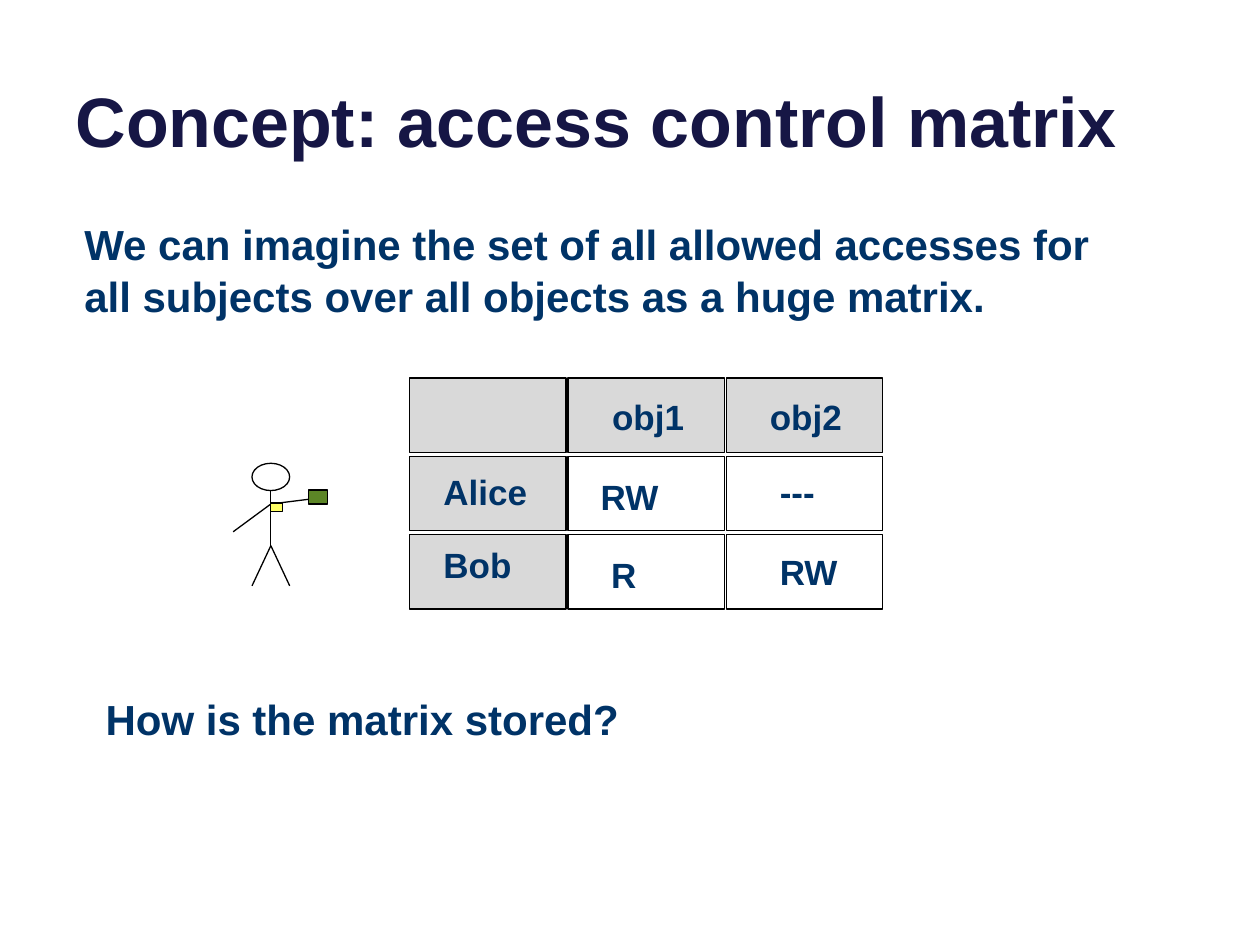
from lxml import etree
from pptx import Presentation
from pptx.dml.color import RGBColor
from pptx.enum.shapes import MSO_CONNECTOR, MSO_SHAPE
from pptx.enum.text import MSO_ANCHOR, PP_ALIGN
from pptx.oxml.ns import qn
from pptx.util import Cm, Pt

RECT, OVAL = MSO_SHAPE.RECTANGLE, MSO_SHAPE.OVAL
STRAIGHT = MSO_CONNECTOR.STRAIGHT
BOTTOM, LEFT = MSO_ANCHOR.BOTTOM, PP_ALIGN.LEFT

BLACK = RGBColor(0x00, 0x00, 0x00)
NAVY = RGBColor(0x16, 0x16, 0x45)
BLUE = RGBColor(0x00, 0x33, 0x67)
GREY = RGBColor(0xD9, 0xD9, 0xD9)
GREEN = RGBColor(0x5C, 0x85, 0x26)
YELLOW = RGBColor(0xFF, 0xFF, 0x66)

# Matrix grid, in cm
GRID_LEFT, GRID_TOP = 8.26, 7.62
CELL_W, CELL_H = 3.15, 1.5
COL_STEP, ROW_STEP = 3.19, 1.58

# Matrix labels: text, left, top in cm
LABELS = [
    ("Alice", 8.69, 9.32),
    ("Bob", 8.69, 10.8),
    ("obj1", 12.09, 7.82),
    ("obj2", 15.27, 7.82),
    ("RW", 11.86, 9.42),
    ("RW", 15.47, 10.95),
    ("R", 12.07, 11),
    ("---", 15.47, 9.32),
]

# Stick figure lines: x1, y1, x2, y2 in cm
LIMBS = [
    (5.46, 9.89, 5.46, 11),
    (5.08, 11.81, 5.46, 11),
    (5.84, 11.81, 5.46, 11),
    (6.5, 10.03, 5.46, 10.16),
    (4.7, 10.72, 5.46, 10.16),
]


def style_paragraph(p, size, color):
    p.alignment = LEFT
    p.font.name = "Arial"
    p.font.size = Pt(size)
    p.font.bold = True
    p.font.color.rgb = color


def add_title(s, text):
    title = s.shapes.title
    title.left, title.top = Cm(1.27), Cm(-0.94)
    title.width, title.height = Cm(22.86), Cm(4.32)
    tf = title.text_frame
    tf.text = text
    tf.vertical_anchor = BOTTOM
    style_paragraph(tf.paragraphs[0], 40, NAVY)


def add_text(s, text, left, top, width, height, size):
    tf = s.shapes.add_textbox(Cm(left), Cm(top), Cm(width), Cm(height)).text_frame
    tf.word_wrap = True
    p = tf.paragraphs[0]
    p.text = text
    p.line_spacing = 1.04
    style_paragraph(p, size, BLUE)


def add_outlined(group, kind, left, top, width, height, fill=None):
    sp = group.shapes.add_shape(kind, Cm(left), Cm(top), Cm(width), Cm(height))
    sp.shadow.inherit = False
    sp.line.color.rgb = BLACK
    sp.line.width = Pt(0.75)
    if fill is None:
        sp.fill.background()
    else:
        sp.fill.solid()
        sp.fill.fore_color.rgb = fill


def add_line(group, x1, y1, x2, y2):
    line = group.shapes.add_connector(STRAIGHT, Cm(x1), Cm(y1), Cm(x2), Cm(y2))
    line.line.color.rgb = BLACK
    line.line.width = Pt(0.75)
    etree.SubElement(line._element.spPr, qn("a:effectLst"))


def add_matrix(s):
    """Draw the 3 x 3 cells, with grey headers, and their labels."""
    cells = s.shapes.add_group_shape()
    for row in range(3):
        for col in range(3):
            header = row == 0 or col == 0
            add_outlined(cells, RECT, GRID_LEFT + col * COL_STEP,
                         GRID_TOP + row * ROW_STEP, CELL_W, CELL_H,
                         GREY if header else None)
    for text, left, top in LABELS:
        add_text(s, text, left, top, 2.72, 1.12, 20)


def add_stick_figure(s):
    figure = s.shapes.add_group_shape()
    for limb in LIMBS:
        add_line(figure, *limb)
    add_outlined(figure, OVAL, 5.08, 9.34, 0.76, 0.55)
    add_outlined(figure, RECT, 6.22, 9.88, 0.38, 0.28, GREEN)
    add_outlined(figure, RECT, 5.46, 10.14, 0.23, 0.17, YELLOW)


def main():
    prs = Presentation()
    prs.slide_width, prs.slide_height = Cm(25.4), Cm(19.05)
    s = prs.slides.add_slide(prs.slide_layouts[5])
    add_title(s, "Concept: access control matrix")
    add_matrix(s)
    add_text(s, "We can imagine the set of all allowed accesses for all "
             "subjects over all objects as a huge matrix.",
             1.45, 4.24, 21.18, 3.07, 24)
    add_text(s, "How is the matrix stored?", 1.88, 13.82, 21.18, 2.06, 24)
    add_stick_figure(s)
    prs.save("out.pptx")


if __name__ == "__main__":
    main()
